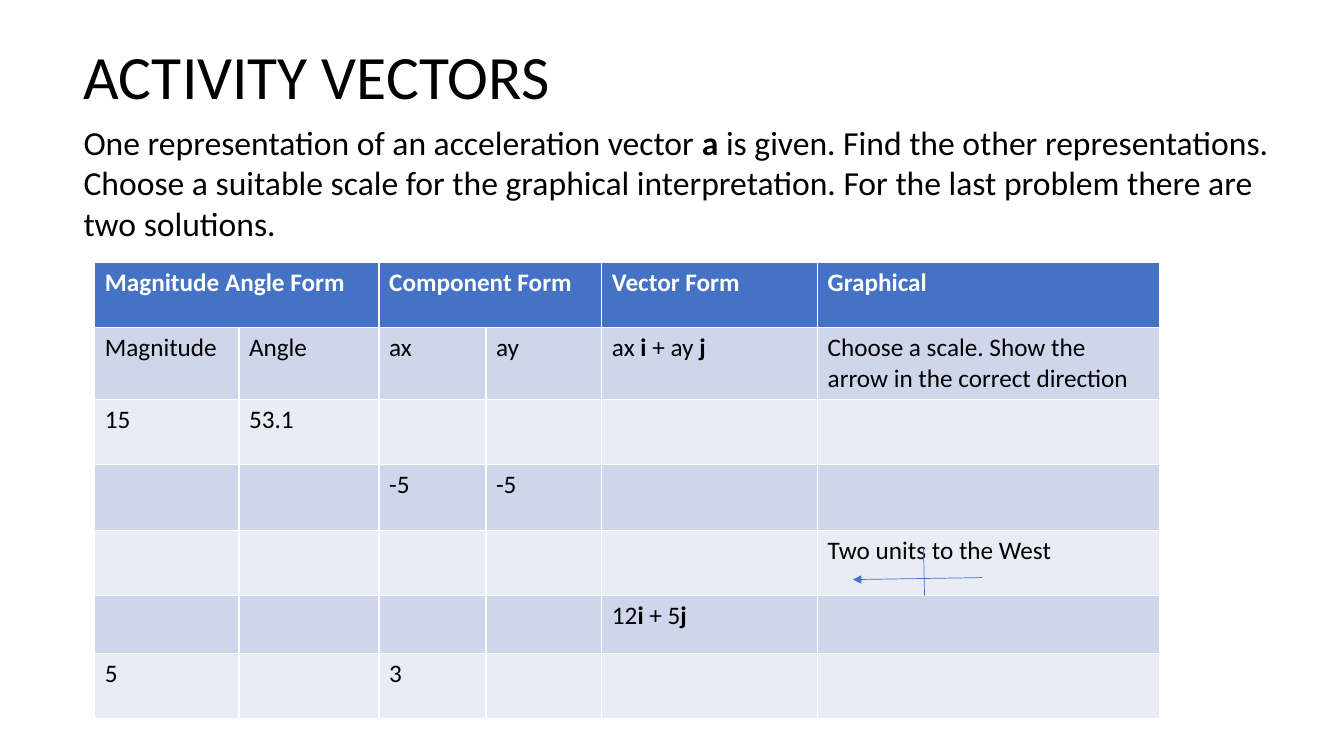
from lxml.etree import SubElement
from pptx import Presentation
from pptx.dml.color import RGBColor
from pptx.enum.shapes import MSO_CONNECTOR
from pptx.enum.text import MSO_ANCHOR, PP_ALIGN
from pptx.oxml.ns import qn
from pptx.util import Inches, Pt

BLACK = RGBColor(0x00, 0x00, 0x00)
WHITE = RGBColor(0xFF, 0xFF, 0xFF)
BLUE = RGBColor(0x44, 0x72, 0xC4)
DARK_BAND = RGBColor(0xCF, 0xD5, 0xEA)
LIGHT_BAND = RGBColor(0xE9, 0xEB, 0xF5)
FONT = "Calibri"

COLUMN_WIDTHS = [1.43, 1.39, 1.06, 1.15, 2.14, 3.39]
ROW_HEIGHTS = [0.65, 0.65, 0.65, 0.65, 0.65, 0.57, 0.65]
ROWS = [
    ["Magnitude Angle Form", "", "Component Form", "", "Vector Form", "Graphical"],
    ["Magnitude", "Angle", "ax", "ay", "ax *i *+ ay *j*",
     "Choose a scale. Show the arrow in the correct direction"],
    ["15", "53.1", "", "", "", ""],
    ["", "", "-5", "-5", "", ""],
    ["", "", "", "", "", "Two units to the West"],
    ["", "", "", "", "12*i *+ 5*j*", ""],
    ["5", "", "3", "", "", ""],
]
INSTRUCTIONS = [
    "One representation of an acceleration vector* a *is given. "
    "Find the other representations.",
    "Choose a suitable scale for the graphical interpretation. "
    "For the last problem there are two solutions.",
]


def write(para, text, size, color=BLACK):
    """Fill a paragraph; parts between asterisks become bold."""
    para.font.name = FONT
    para.font.size = Pt(size)
    para.font.color.rgb = color
    for index, part in enumerate(text.split("*")):
        if part:
            span = para.add_run()
            span.text = part
            if index % 2:
                span.font.bold = True


def add_thin_line(shapes, start_x, start_y, end_x, end_y):
    line = shapes.add_connector(MSO_CONNECTOR.STRAIGHT, Inches(start_x),
                                Inches(start_y), Inches(end_x), Inches(end_y))
    line.line.color.rgb = BLUE
    line.line.width = Pt(0.5)
    SubElement(line._element.spPr, qn("a:effectLst"))
    return line


deck = Presentation()
deck.slide_width = Inches(13.33)
deck.slide_height = Inches(7.5)
page = deck.slides.add_slide(deck.slide_layouts[5])

# Title
title = page.shapes.title
title.left, title.top = Inches(0.73), Inches(0.06)
title.width, title.height = Inches(11.5), Inches(1.45)
title.text_frame.vertical_anchor = MSO_ANCHOR.MIDDLE
heading = title.text_frame.paragraphs[0]
heading.alignment = PP_ALIGN.LEFT
heading.line_spacing = 0.9
write(heading, "ACTIVITY VECTORS", 44)

# Table of representations
frame = page.shapes.add_table(len(ROWS), len(COLUMN_WIDTHS), Inches(0.94), Inches(2.6),
                              Inches(sum(COLUMN_WIDTHS)), Inches(sum(ROW_HEIGHTS)))
table = frame.table
for column, width in zip(table.columns, COLUMN_WIDTHS):
    column.width = Inches(width)
for row, height in zip(table.rows, ROW_HEIGHTS):
    row.height = Inches(height)
for first in (0, 2):
    table.cell(0, first).merge(table.cell(0, first + 1))
for row_index, texts in enumerate(ROWS):
    is_header = row_index == 0
    band = BLUE if is_header else DARK_BAND if row_index % 2 else LIGHT_BAND
    for column_index, text in enumerate(texts):
        cell = table.cell(row_index, column_index)
        cell.fill.solid()
        cell.fill.fore_color.rgb = band
        para = cell.text_frame.paragraphs[0]
        write(para, text, 18, WHITE if is_header else BLACK)
        para.font.bold = True if is_header else None

# Instructions
box = page.shapes.add_textbox(Inches(0.73), Inches(1.16), Inches(12.01), Inches(1.31))
box.text_frame.word_wrap = True
box.text_frame.text = "\n" * (len(INSTRUCTIONS) - 1)
for para, text in zip(box.text_frame.paragraphs, INSTRUCTIONS):
    write(para, text, 24)

# Arrow to the west, with its vertical axis
arrow = add_thin_line(page.shapes, 9.74, 5.73, 8.46, 5.75)
SubElement(arrow.line._get_or_add_ln(), qn("a:tailEnd"), type="triangle")
add_thin_line(page.shapes, 9.16, 5.44, 9.17, 5.91)

deck.save("out.pptx")
